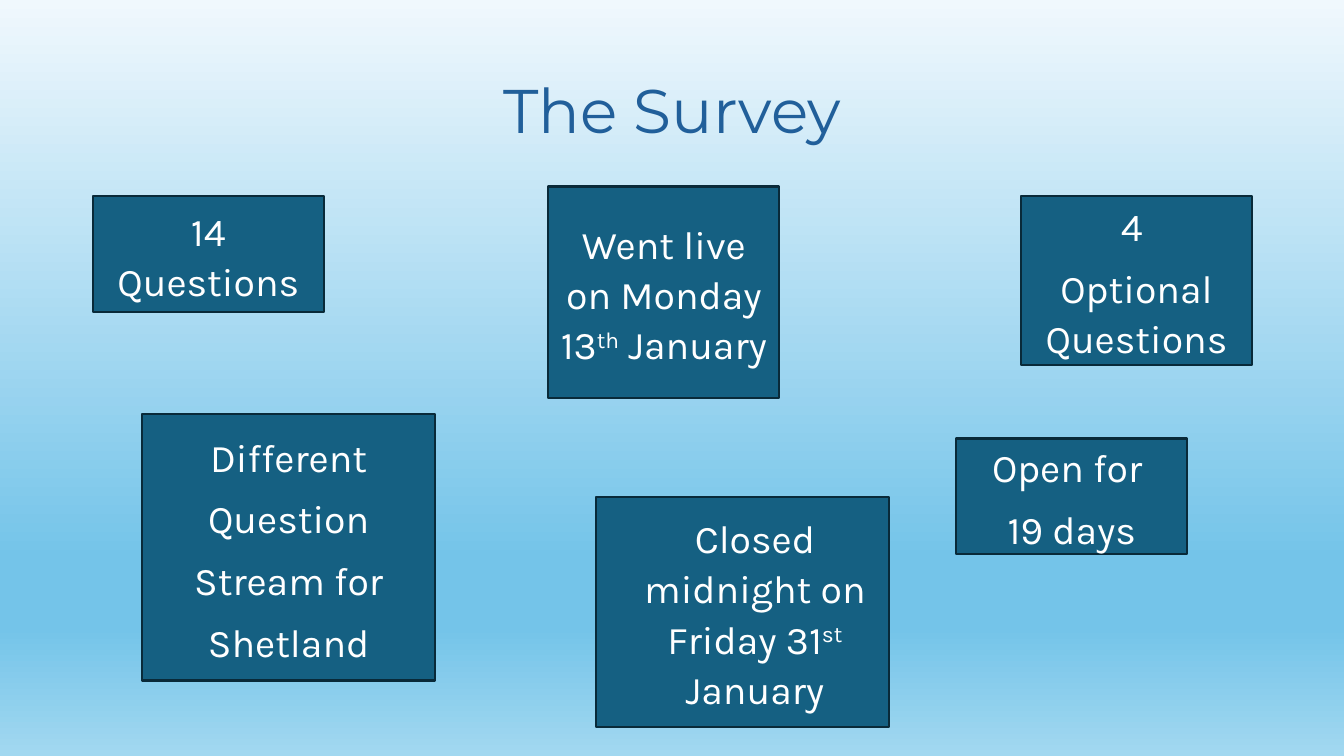
from lxml import etree
from pptx import Presentation
from pptx import util as u
from pptx.dml.color import RGBColor
from pptx.enum import shapes, text
from pptx.oxml import ns

TITLE_BLUE = RGBColor(0x21, 0x5F, 0x9A)
CARD_FILL = RGBColor(0x15, 0x60, 0x82)
CARD_LINE = RGBColor(0x09, 0x2A, 0x39)
WHITE = RGBColor(0xFF, 0xFF, 0xFF)
SKY_STOPS = [(0, "F0F8FD"), (74, "74C4E9"), (83, "74C4E9"), (100, "A2D8F0")]

NARROW, WIDE = 5.82, 7.39

# left, top, width, height, left indent (cm), paragraphs; ^ encloses superscript
CARDS = [
    (2.34, 4.95, NARROW, 2.92, 0, ["14 Questions"]),
    (25.73, 4.93, NARROW, 4.27, 0, ["4 ", "Optional Questions"]),
    (3.58, 10.44, WIDE, 6.71, 0,
     ["Different", "Question", "Stream for", "Shetland"]),
    (24.1, 11.05, NARROW, 2.92, 0, ["Open for ", "19 days"]),
    (15.01, 12.52, WIDE, 5.79, 0.64,
     ["Closed midnight on Friday 31^st^ January"]),
    (13.82, 4.7, NARROW, 5.33, 0, ["Went live on Monday 13^th^ January"]),
]

deck = Presentation()
deck.slide_width, deck.slide_height = u.Cm(33.87), u.Cm(19.05)
page = deck.slides.add_slide(deck.slide_layouts[6])

# Sky gradient background, top to bottom
sky = page.background.fill
sky.gradient()
sky.gradient_angle = 270
stop_list = page.element.find(".//" + ns.qn("a:gsLst"))
for old_stop in list(stop_list):
    stop_list.remove(old_stop)
for percent, colour in SKY_STOPS:
    stop = etree.SubElement(stop_list, ns.qn("a:gs"), pos=str(percent * 1000))
    etree.SubElement(stop, ns.qn("a:srgbClr"), val=colour)

# Title
title = page.shapes.add_textbox(u.Cm(2.34), u.Cm(1.02), u.Cm(29.21), u.Cm(3.68))
title.text_frame.word_wrap = True
title.text_frame.vertical_anchor = text.MSO_ANCHOR.MIDDLE
title.text_frame.text = "The Survey"
heading = title.text_frame.paragraphs[0]
heading.alignment = text.PP_ALIGN.CENTER
heading.line_spacing = 0.9
heading_font = heading.runs[0].font
heading_font.name, heading_font.size = "Montserrat", u.Pt(44)
heading_font.color.rgb = TITLE_BLUE

# Fact cards
for left, top, width, height, indent, lines in CARDS:
    box = page.shapes.add_shape(
        shapes.MSO_SHAPE.RECTANGLE,
        u.Cm(left), u.Cm(top), u.Cm(width), u.Cm(height))
    box.shadow.inherit = False
    box.fill.solid()
    box.fill.fore_color.rgb = CARD_FILL
    box.line.color.rgb = CARD_LINE
    box.line.width = u.Pt(1.5)
    frame = box.text_frame
    frame.word_wrap = True
    frame.vertical_anchor = text.MSO_ANCHOR.MIDDLE
    frame.text = "\n".join(line.split("^")[0] for line in lines)
    for para, line in zip(frame.paragraphs, lines):
        para.alignment = text.PP_ALIGN.CENTER
        para.line_spacing = 1.07
        para.space_after = u.Pt(8)
        if indent:
            para._p.get_or_add_pPr().set("marL", str(u.Cm(indent)))
        for part in line.split("^")[1:]:
            para.add_run().text = part
        for number, span in enumerate(para.runs):
            span.font.name, span.font.size = "Karla", u.Pt(28)
            span.font.color.rgb = WHITE
            if number % 2:
                span._r.get_or_add_rPr().set("baseline", "30000")

deck.save("out.pptx")
